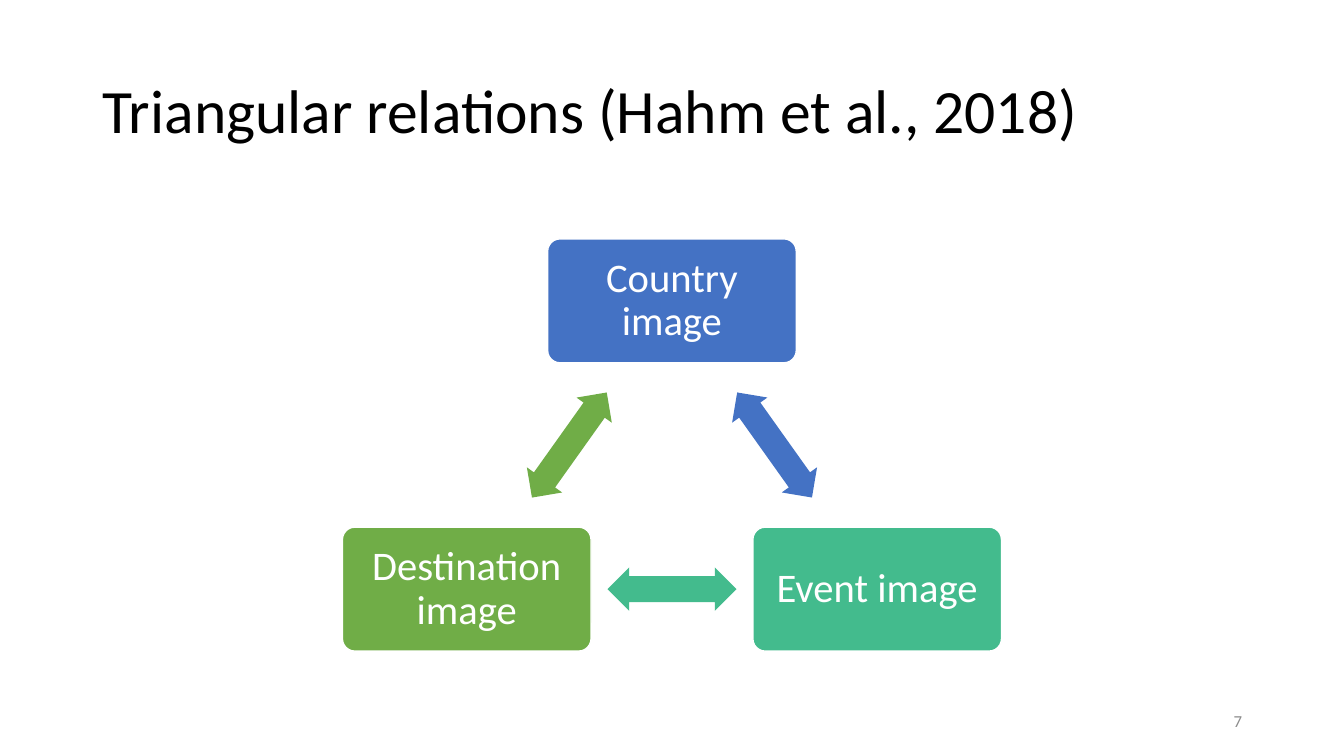
from dataclasses import dataclass
from itertools import cycle, islice
from math import atan2, degrees

from pptx import Presentation
from pptx.dml.color import RGBColor
from pptx.enum.shapes import MSO_SHAPE
from pptx.enum.text import MSO_ANCHOR, MSO_AUTO_SIZE, PP_ALIGN
from pptx.shapes.autoshape import Shape
from pptx.slide import Slide
from pptx.util import Inches, Pt

BLACK = RGBColor(0x00, 0x00, 0x00)
WHITE = RGBColor(0xFF, 0xFF, 0xFF)
GREY = RGBColor(0x8C, 0x8C, 0x8C)
BLUE = RGBColor(0x44, 0x72, 0xC4)
TEAL = RGBColor(0x43, 0xBB, 0x8D)
GREEN = RGBColor(0x70, 0xAD, 0x47)

FONT = "Calibri"
SLIDE_WIDTH = Inches(13.33)
SLIDE_HEIGHT = Inches(7.5)
BOX_SIZE = (18.5, 16.4)
ARROW_SIZE = (9.6, 5.73)
BOX_INSET = Inches(0.16)


@dataclass(frozen=True)
class Node:
    """A corner of the triangle, centred at percentages of the slide."""
    label: str
    center_x: float
    center_y: float
    color: RGBColor


NODES = [
    Node("Country image", 50, 39.8, BLUE),
    Node("Event image", 65.27, 77.93, TEAL),
    Node("Destination image", 34.73, 77.93, GREEN),
]


def across(percent: float) -> int:
    """Turn a percentage of the slide width into a length."""
    return round(SLIDE_WIDTH * percent / 100)


def down(percent: float) -> int:
    """Turn a percentage of the slide height into a length."""
    return round(SLIDE_HEIGHT * percent / 100)


def place(shape: Shape, left: float, top: float, width: float, height: float) -> None:
    """Position a shape by percentages of the slide."""
    shape.left, shape.top = across(left), down(top)
    shape.width, shape.height = across(width), down(height)


def write(shape: Shape, text: str, size: float, color: RGBColor,
          alignment: PP_ALIGN, spacing: float) -> None:
    """Fill a shape with one vertically centred paragraph."""
    frame = shape.text_frame
    frame.text = text
    frame.word_wrap = True
    frame.auto_size = MSO_AUTO_SIZE.NONE
    frame.vertical_anchor = MSO_ANCHOR.MIDDLE
    paragraph = frame.paragraphs[0]
    paragraph.alignment = alignment
    paragraph.line_spacing = spacing
    paragraph.font.name = FONT
    paragraph.font.size = Pt(size)
    paragraph.font.color.rgb = color


def add_centered(slide: Slide, kind: MSO_SHAPE, center_x: float, center_y: float,
                 size: tuple[float, float], color: RGBColor) -> Shape:
    """Add a filled shape around a centre point."""
    width, height = size
    shape = slide.shapes.add_shape(kind, 0, 0, 0, 0)
    place(shape, center_x - width / 2, center_y - height / 2, width, height)
    shape.shadow.inherit = False
    shape.fill.solid()
    shape.fill.fore_color.rgb = color
    return shape


def add_node(slide: Slide, node: Node) -> None:
    """Draw a labelled rounded box."""
    box = add_centered(slide, MSO_SHAPE.ROUNDED_RECTANGLE,
                       node.center_x, node.center_y, BOX_SIZE, node.color)
    box.adjustments[0] = 0.1
    box.line.color.rgb = WHITE
    box.line.width = Pt(1)
    frame = box.text_frame
    frame.margin_left = frame.margin_right = BOX_INSET
    frame.margin_top = frame.margin_bottom = BOX_INSET
    write(box, node.label, 29, WHITE, PP_ALIGN.CENTER, 0.9)


def add_relation(slide: Slide, start: Node, end: Node) -> None:
    """Draw a double arrow halfway between two nodes, along their axis."""
    arrow = add_centered(slide, MSO_SHAPE.LEFT_RIGHT_ARROW,
                         (start.center_x + end.center_x) / 2,
                         (start.center_y + end.center_y) / 2,
                         ARROW_SIZE, start.color)
    arrow.adjustments[0] = 0.6
    arrow.adjustments[1] = 0.5
    arrow.line.fill.background()
    arrow.rotation = degrees(atan2(down(end.center_y - start.center_y),
                                   across(end.center_x - start.center_x))) % 360


def main() -> None:
    """Build and save the slide."""
    presentation = Presentation()
    presentation.slide_width = SLIDE_WIDTH
    presentation.slide_height = SLIDE_HEIGHT
    slide = presentation.slides.add_slide(presentation.slide_layouts.get_by_name("Title Only"))

    title = slide.shapes.title
    place(title, 6.9, 5.33, 86.25, 19.33)
    write(title, "Triangular relations (Hahm et al., 2018)", 44, BLACK, PP_ALIGN.LEFT, 0.9)

    for start, end in zip(NODES, islice(cycle(NODES), 1, None)):
        add_node(slide, start)
        add_relation(slide, start, end)

    page_number = slide.shapes.add_textbox(0, 0, 0, 0)
    place(page_number, 70.66, 92.67, 22.5, 5.33)
    write(page_number, "7", 12, GREY, PP_ALIGN.RIGHT, 1.0)

    presentation.save("out.pptx")


if __name__ == "__main__":
    main()
